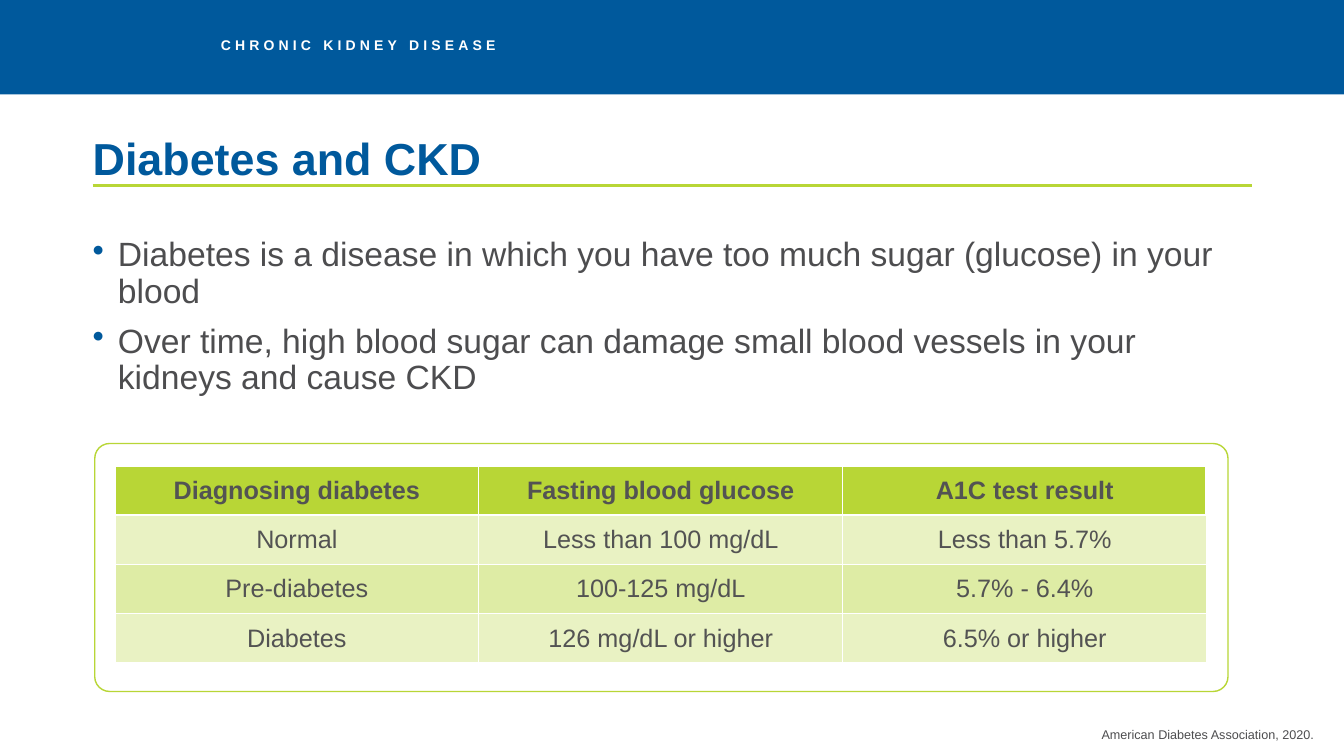
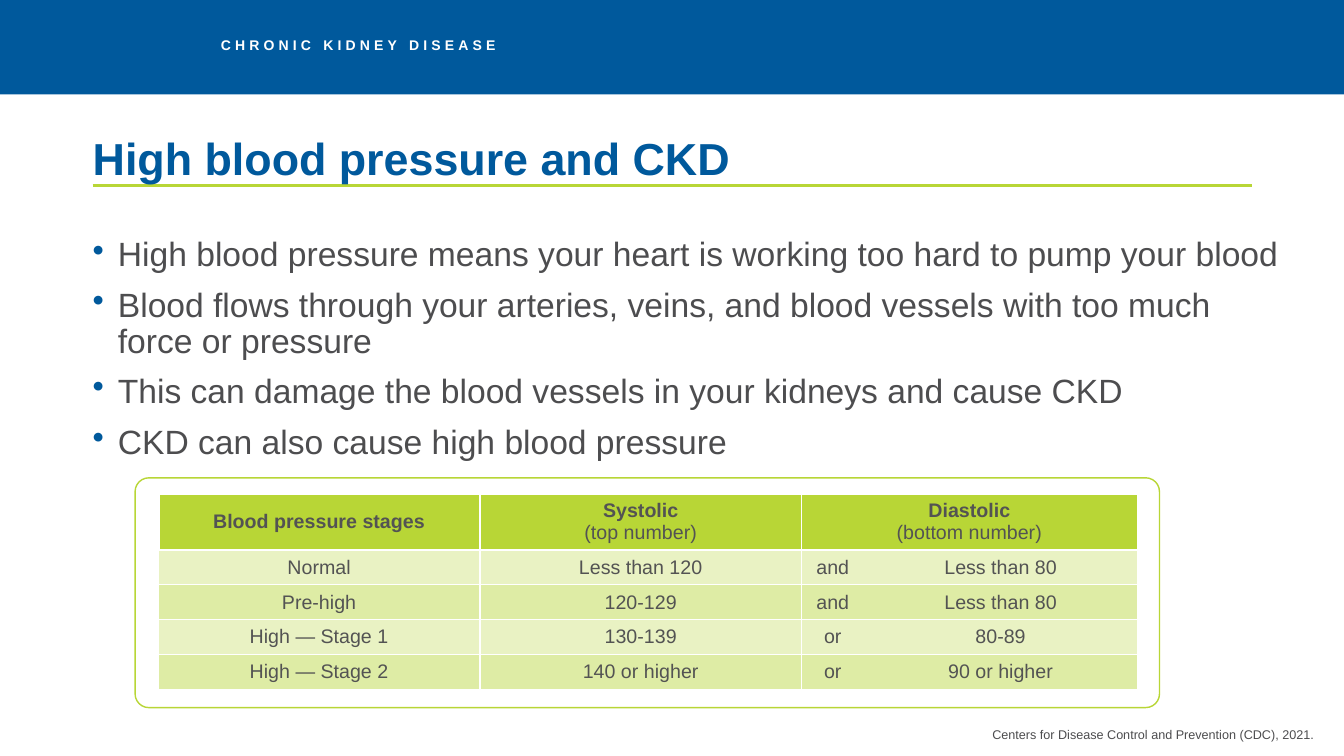
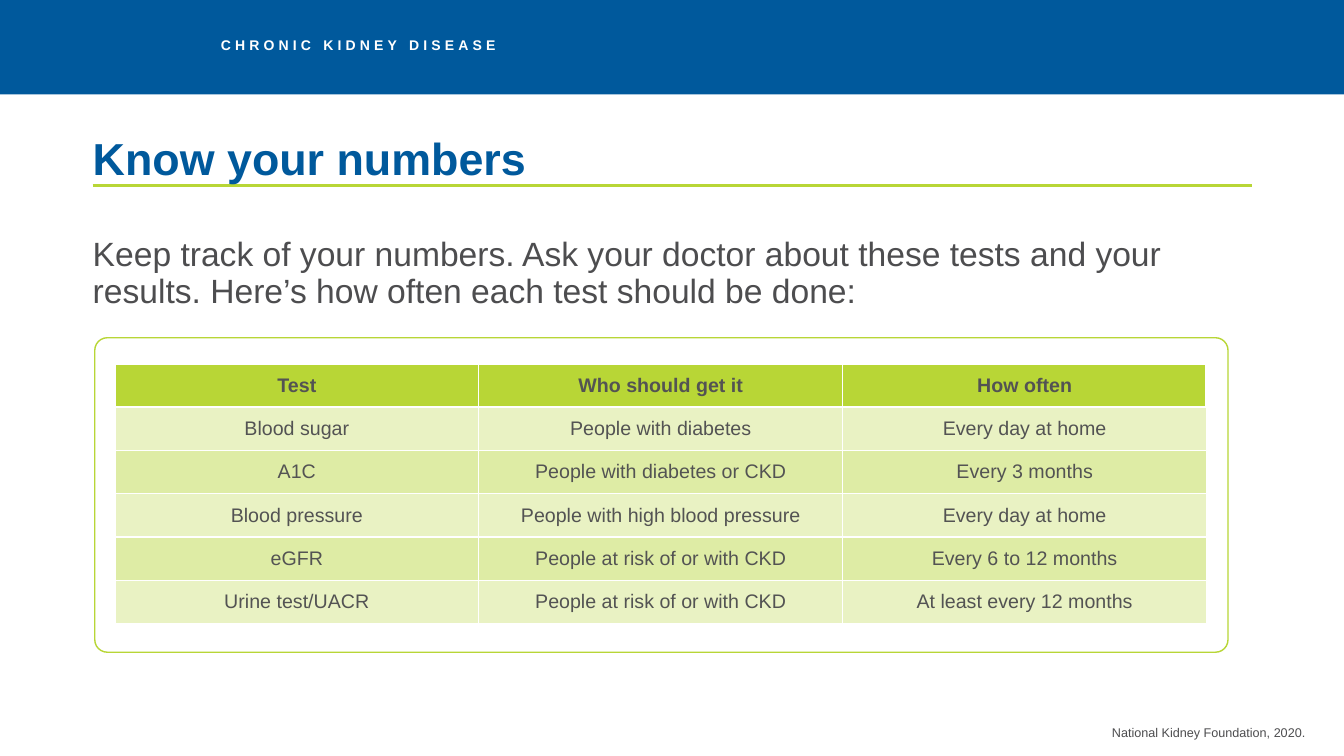
import lxml.etree
import pptx
import pptx.dml.color
import pptx.enum.shapes
import pptx.enum.text
import pptx.oxml.ns
import pptx.util

SLIDE_WIDTH = pptx.util.Inches(13.33)
SLIDE_HEIGHT = pptx.util.Inches(7.5)
FONT = "Arial"
BLUE, GREEN, WHITE = "00599C", "B8D636", "FFFFFF"
BODY_GREY, TABLE_GREY = "4D4D4F", "535353"
ROW_FILLS = ("E9F2C3", "DEECA5")
LEFT, CONTENT_WIDTH, RULE_TOP = 6.9, 86.25, 24.53
INSET = pptx.util.Inches(0.05)
ALIGN = pptx.enum.text.PP_ALIGN
ANCHOR = pptx.enum.text.MSO_ANCHOR
SHAPE = pptx.enum.shapes.MSO_SHAPE


def color(value):
    return pptx.dml.color.RGBColor.from_string(value)


def across(percent):
    return round(SLIDE_WIDTH * percent / 100)


def down(percent):
    return round(SLIDE_HEIGHT * percent / 100)


def box(left, top, width, height):
    return across(left), down(top), across(width), down(height)


def add_xml(parent, tag, **attributes):
    return lxml.etree.SubElement(parent, pptx.oxml.ns.qn(tag), attributes)


def style_font(font, size, value, bold=False):
    font.name = FONT
    font.size = pptx.util.Pt(size)
    font.bold = bold
    font.color.rgb = color(value)


def set_frame(frame, inset=0, anchor=ANCHOR.TOP):
    frame.word_wrap = True
    frame.auto_size = pptx.enum.text.MSO_AUTO_SIZE.NONE
    frame.vertical_anchor = anchor
    frame.margin_left = frame.margin_right = inset
    frame.margin_top = frame.margin_bottom = inset


def add_text(slide, area, paragraphs, size, value, bold=False, inset=0,
             align=ALIGN.LEFT, line_spacing=0.9, bullets=False):
    shape = slide.shapes.add_textbox(*box(*area))
    frame = shape.text_frame
    set_frame(frame, inset)
    for index, text in enumerate(paragraphs):
        paragraph = frame.add_paragraph() if index else frame.paragraphs[0]
        paragraph.text = text
        paragraph.alignment = align
        paragraph.line_spacing = line_spacing
        if index:
            paragraph.space_before = pptx.util.Pt(10)
        if bullets:
            add_bullet(paragraph)
        style_font(paragraph.font, size, value, bold)
    return shape


def add_bullet(paragraph):
    properties = paragraph._p.get_or_add_pPr()
    indent = pptx.util.Inches(0.25)
    properties.set("marL", str(indent))
    properties.set("indent", str(-indent))
    add_xml(add_xml(properties, "a:buClr"), "a:srgbClr", val=BLUE)
    add_xml(properties, "a:buChar", char="•")


def add_panel(slide, area, kind, fill, line=None):
    shape = slide.shapes.add_shape(kind, *box(*area))
    shape.shadow.inherit = False
    shape.fill.solid()
    shape.fill.fore_color.rgb = color(fill)
    if line:
        shape.line.color.rgb = color(line)
        shape.line.width = pptx.util.Pt(1)
    else:
        shape.line.fill.background()
    return shape


def add_rule(slide):
    rule = slide.shapes.add_connector(
        pptx.enum.shapes.MSO_CONNECTOR.STRAIGHT,
        across(LEFT), down(RULE_TOP), across(LEFT + CONTENT_WIDTH), down(RULE_TOP))
    rule.line.color.rgb = color(GREEN)
    rule.line.width = pptx.util.Pt(2)
    add_xml(rule._element.spPr, "a:effectLst")
    return rule


def decorate_layout(layout, slide):
    for placeholder in list(layout.placeholders):
        if placeholder.placeholder_format.idx:
            layout.shapes.element.remove(placeholder.element)
    band = add_panel(slide, (0, 0, 100, 12.5), SHAPE.RECTANGLE, BLUE)
    rule = add_rule(slide)
    heading = add_text(slide, (16.43, 5.07, 23.25, 3.2),
                       ["CHRONIC KIDNEY DISEASE"], 10, WHITE, bold=True)
    run = heading.text_frame.paragraphs[0].runs[0]
    run._r.get_or_add_rPr().set("spc", "300")
    for shape in (band, rule, heading):
        layout.shapes.element.append(shape.element)


def add_title(slide, text):
    title = slide.shapes.title
    title.left, title.top, title.width, title.height = box(
        LEFT, 15.07, CONTENT_WIDTH, RULE_TOP - 15.07)
    set_frame(title.text_frame, anchor=ANCHOR.BOTTOM)
    title.text_frame.text = text
    paragraph = title.text_frame.paragraphs[0]
    paragraph.alignment = ALIGN.LEFT
    paragraph.line_spacing = 0.9
    style_font(paragraph.font, 32, BLUE, bold=True)


def add_body(slide, paragraphs, width=CONTENT_WIDTH, bullets=True):
    add_text(slide, (LEFT, 31.47, width, 54.4), paragraphs, 24, BODY_GREY,
             bullets=bullets)


def add_source(slide, text, right=98.13, top=95.47):
    width = 34.06
    add_text(slide, (right - width, top, width, 3.33), [text], 9, BODY_GREY,
             inset=INSET, align=ALIGN.RIGHT, line_spacing=1)


def add_frame(slide, area, corner):
    shape = add_panel(slide, area, SHAPE.ROUNDED_RECTANGLE, WHITE, GREEN)
    shape.adjustments[0] = corner


def add_borders(cell, widths):
    properties = cell._tc.get_or_add_tcPr()
    for side, width in zip("LRTB", widths):
        line = add_xml(properties, f"a:ln{side}", w=str(pptx.util.Pt(width)))
        if width:
            add_xml(add_xml(line, "a:solidFill"), "a:srgbClr", val=WHITE)
        else:
            add_xml(line, "a:noFill")


def fill_cell(cell, text, size, fill, header):
    cell.fill.solid()
    cell.fill.fore_color.rgb = color(fill)
    cell.vertical_anchor = ANCHOR.MIDDLE
    cell.margin_left = cell.margin_right = INSET
    cell.margin_top = cell.margin_bottom = INSET
    paragraph = cell.text_frame.paragraphs[0]
    paragraph.alignment = ALIGN.CENTER
    style_font(paragraph.font, size, TABLE_GREY, header)
    for index, line in enumerate(text.split("\n")):
        if index:
            paragraph.add_line_break()
        run = paragraph.add_run()
        run.text = line
        if index:
            run.font.bold = False


def add_table(slide, left, top, columns, heights, size, rows, joined=None):
    shape = slide.shapes.add_table(
        len(rows), len(columns), *box(left, top, sum(columns), sum(heights)))
    table = shape.table
    for column, width in zip(table.columns, columns):
        column.width = across(width)
    for row, height in zip(table.rows, heights):
        row.height = down(height)
    if joined:
        table.cell(0, joined - 1).merge(table.cell(0, joined))
    last = len(columns) - 1
    for row_index, row in enumerate(rows):
        header = row_index == 0
        fill = GREEN if header else ROW_FILLS[(row_index - 1) % 2]
        for column_index, text in enumerate(row):
            cell = table.cell(row_index, column_index)
            left_width = 2 if header and column_index == 0 else 1
            right_width = 2 if header and column_index == last else 1
            if joined and column_index == joined:
                left_width = 0
            if joined and column_index == joined - 1:
                right_width = 0
            top_width = 2 if row_index < 2 else 1
            add_borders(cell, (left_width, right_width, top_width, 2 if header else 1))
            if not cell.is_spanned:
                fill_cell(cell, text, size, fill, header)


def build_diabetes(slide):
    add_title(slide, "Diabetes and CKD")
    add_source(slide, "American Diabetes Association, 2020.")
    add_body(slide, [
        "Diabetes is a disease in which you have too much sugar (glucose) in your blood",
        "Over time, high blood sugar can damage small blood vessels in your kidneys and cause CKD",
    ])
    add_frame(slide, (7.05, 58.67, 84.32, 32.8), 0.06)
    add_table(slide, 8.55, 61.6, [27.08] * 3, [6.53] * 4, 18, [
        ("Diagnosing diabetes", "Fasting blood glucose", "A1C test result"),
        ("Normal", "Less than 100 mg/dL", "Less than 5.7%"),
        ("Pre-diabetes", "100-125 mg/dL", "5.7% - 6.4%"),
        ("Diabetes", "126 mg/dL or higher", "6.5% or higher"),
    ])


def build_blood_pressure(slide):
    add_title(slide, "High blood pressure and CKD")
    add_body(slide, [
        "High blood pressure means your heart is working too hard to pump your blood",
        "Blood flows through your arteries, veins, and blood vessels with too much force or pressure",
        "This can damage the blood vessels in your kidneys and cause CKD",
        "CKD can also cause high blood pressure",
    ], width=89.2)
    add_source(slide, "Centers for Disease Control and Prevention (CDC), 2021.")
    add_frame(slide, (10.05, 63.2, 76.22, 30.4), 0.06)
    add_table(slide, 11.78, 65.33, [23.93, 23.93, 4.65, 20.33], [7.4] + [4.62] * 4, 14, [
        ("Blood pressure stages", "Systolic\n(top number)", "Diastolic\n(bottom number)", ""),
        ("Normal", "Less than 120", "and", "Less than 80"),
        ("Pre-high", "120-129", "and", "Less than 80"),
        ("High — Stage 1", "130-139", "or", "80-89"),
        ("High — Stage 2", "140 or higher", "or", "90 or higher"),
    ], joined=3)


def build_numbers(slide):
    add_title(slide, "Know your numbers")
    add_body(slide, [
        "Keep track of your numbers. Ask your doctor about these tests and your results. "
        "Here’s how often each test should be done:",
    ], bullets=False)
    add_frame(slide, (7.05, 44.67, 84.32, 41.6), 0.04)
    add_table(slide, 8.55, 48.13, [27.08] * 3, [5.73] * 6, 14, [
        ("Test", "Who should get it", "How often"),
        ("Blood sugar", "People with diabetes", "Every day at home"),
        ("A1C", "People with diabetes or CKD", "Every 3 months"),
        ("Blood pressure", "People with high blood pressure", "Every day at home"),
        ("eGFR", "People at risk of or with CKD", "Every 6 to 12 months"),
        ("Urine test/UACR", "People at risk of or with CKD", "At least every 12 months"),
    ])
    add_source(slide, "National Kidney Foundation, 2020.", right=97.5, top=95.2)


def main():
    presentation = pptx.Presentation()
    presentation.slide_width = SLIDE_WIDTH
    presentation.slide_height = SLIDE_HEIGHT
    layout = presentation.slide_layouts[5]
    for index, build in enumerate((build_diabetes, build_blood_pressure, build_numbers)):
        slide = presentation.slides.add_slide(layout)
        if index == 0:
            decorate_layout(layout, slide)
        build(slide)
    presentation.save("out.pptx")


if __name__ == "__main__":
    main()
